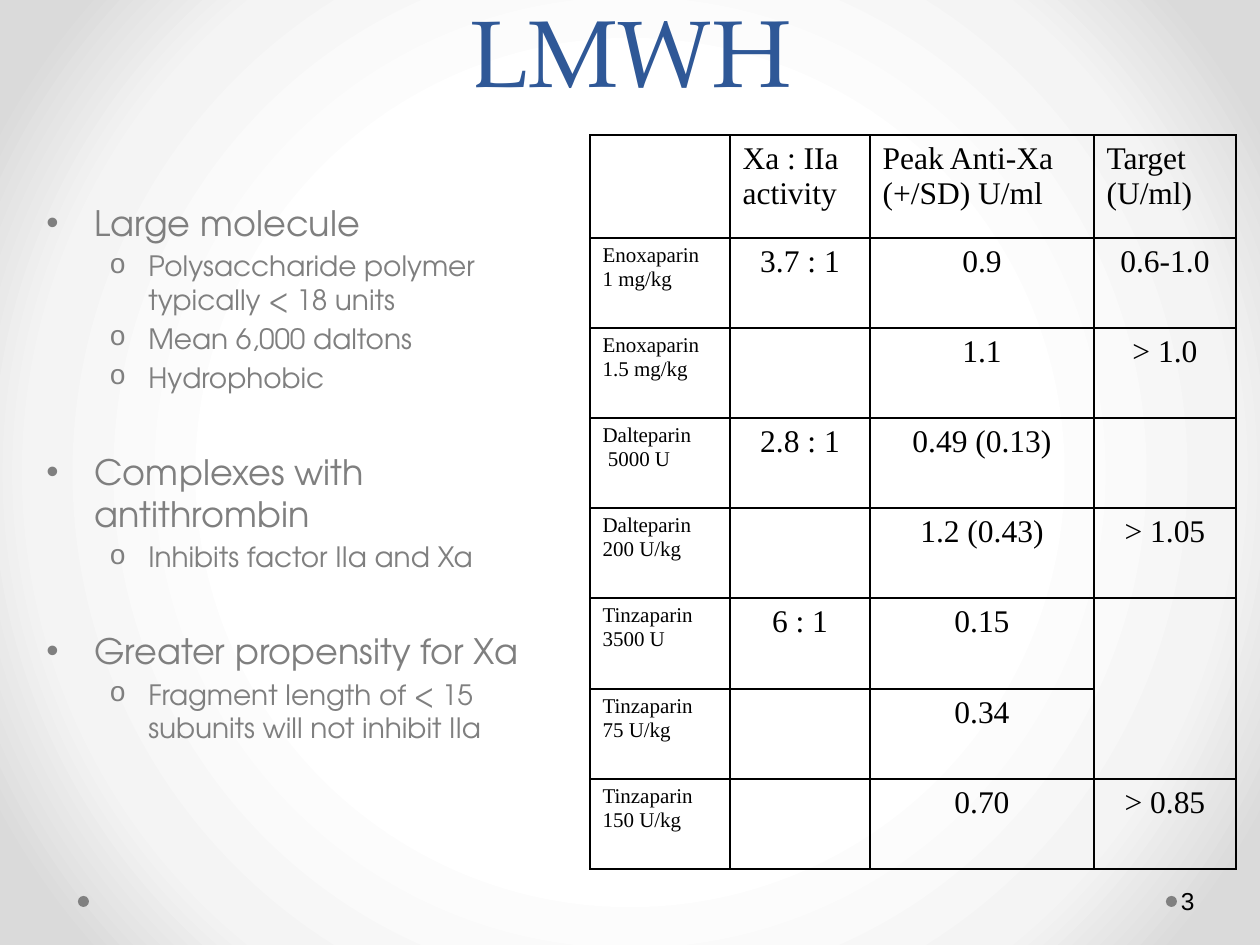
from dataclasses import dataclass

import lxml.etree as etree
import pptx
import pptx.dml.color
import pptx.enum.shapes
import pptx.enum.text
import pptx.oxml.ns
import pptx.util

PX_PER_INCH = 126
ALIGN = pptx.enum.text.PP_ALIGN
ANCHOR = pptx.enum.text.MSO_ANCHOR
qn = pptx.oxml.ns.qn


@dataclass(frozen=True)
class TextStyle:
    font: str
    size: int
    color: str


@dataclass(frozen=True)
class BulletLevel:
    char: str
    char_font: str
    style: TextStyle
    margin: int
    hanging: int
    space_before: float


@dataclass(frozen=True)
class Topic:
    heading: str
    details: tuple[str, ...]
    space_before: float


TITLE = TextStyle("TeX Gyre Pagella", 54, "2F5897")
PAGE_NUMBER = TextStyle("Arial", 14, "000000")
CELL = TextStyle("Times New Roman", 18, "000000")
DRUG = TextStyle("Times New Roman", 12, "000000")
HEADING = BulletLevel("•", "Arial", TextStyle("TeX Gyre Adventor", 20, "7F7F7F"), 48, 48, 4)
DETAIL = BulletLevel("o", "Courier New", TextStyle("TeX Gyre Adventor", 16, "7F7F7F"), 102, 39, 3.2)

TOPICS = (
    Topic("Large molecule", ("Polysaccharide polymer typically < 18 units",
                             "Mean 6,000 daltons", "Hydrophobic"), 4),
    Topic("Complexes with antithrombin", ("Inhibits factor IIa and Xa",), 32),
    Topic("Greater propensity for Xa",
          ("Fragment length of < 15 subunits will not inhibit IIa",), 32),
)

COLUMN_WIDTHS = (140, 140, 224, 142)
ROW_HEIGHTS = (103,) + (90,) * 4 + (91,) + (90,) * 2
ROWS = (
    ("", "Xa : IIa\nactivity", "Peak Anti-Xa\n(+/SD) U/ml", "Target\n(U/ml)"),
    ("Enoxaparin\n1 mg/kg", "3.7 : 1", "0.9", "0.6-1.0"),
    ("Enoxaparin\n1.5 mg/kg", "", "1.1", "> 1.0"),
    ("Dalteparin\n 5000 U", "2.8 : 1", "0.49 (0.13)", ""),
    ("Dalteparin\n200 U/kg", "", "1.2 (0.43)", "> 1.05"),
    ("Tinzaparin\n3500 U", "6 : 1", "0.15", ""),
    ("Tinzaparin\n75 U/kg", "", "0.34", ""),
    ("Tinzaparin\n150 U/kg", "", "0.70", "> 0.85"),
)


def px(length: int) -> int:
    return round(length * 914400 / PX_PER_INCH)


def rgb(color: str) -> pptx.dml.color.RGBColor:
    return pptx.dml.color.RGBColor.from_string(color)


def apply(target, values: dict) -> None:
    for name, value in values.items():
        setattr(target, name, value)


def add_span(para, text: str, style: TextStyle) -> None:
    span = para.add_run()
    span.text = text
    apply(span.font, {"name": style.font, "size": pptx.util.Pt(style.size)})
    span.font.color.rgb = rgb(style.color)


def next_para(frame):
    """Return the first paragraph while it is unused, otherwise a new one."""
    first = frame.paragraphs[0]
    return frame.add_paragraph() if first.runs else first


def set_hanging_indent(para, margin: int, hanging: int):
    properties = para._p.get_or_add_pPr()
    properties.set("marL", str(px(margin)))
    properties.set("indent", str(-px(hanging)))
    return properties


def paint_background(page) -> None:
    fill = page.background.fill
    fill.gradient()
    gradient = page.background._cSld.find(".//" + qn("a:gradFill"))
    for child in list(gradient):
        gradient.remove(child)
    stops = etree.SubElement(gradient, qn("a:gsLst"))
    for position, color in ((50, "FFFFFF"), (76, "F4F4F4"), (92, "DADADA")):
        stop = etree.SubElement(stops, qn("a:gs"), pos=str(position * 1000))
        etree.SubElement(stop, qn("a:srgbClr"), val=color)
    shading = etree.SubElement(gradient, qn("a:path"), {"path": "circle"})
    etree.SubElement(shading, qn("a:fillToRect"), dict.fromkeys("ltrb", "50000"))


def add_dot(page, left: int) -> None:
    dot = page.shapes.add_shape(pptx.enum.shapes.MSO_SHAPE.OVAL,
                                px(left), px(896), px(11), px(11))
    dot.shadow.inherit = False
    dot.fill.solid()
    dot.fill.fore_color.rgb = rgb("808080")
    dot.line.fill.background()


def set_title(page) -> None:
    title = page.shapes.title
    apply(title, {"left": px(64), "top": px(26), "width": px(1134), "height": px(87)})
    apply(title.text_frame, {"vertical_anchor": ANCHOR.BOTTOM, "word_wrap": True,
                             "auto_size": pptx.enum.text.MSO_AUTO_SIZE.NONE})
    para = title.text_frame.paragraphs[0]
    apply(para, {"alignment": ALIGN.CENTER, "line_spacing": pptx.util.Pt(58)})
    add_span(para, "LMWH", TITLE)


def add_bullet(frame, text: str, level: BulletLevel, space_before: float) -> None:
    para = next_para(frame)
    para.space_before = pptx.util.Pt(space_before)
    properties = set_hanging_indent(para, level.margin, level.hanging)
    etree.SubElement(properties, qn("a:buFont"), typeface=level.char_font)
    etree.SubElement(properties, qn("a:buChar"), char=level.char)
    add_span(para, text, level.style)


def add_topics(page) -> None:
    box = page.shapes.add_textbox(px(34), px(195), px(528), px(624))
    box.text_frame.word_wrap = True
    for topic in TOPICS:
        add_bullet(box.text_frame, topic.heading, HEADING, topic.space_before)
        for detail in topic.details:
            add_bullet(box.text_frame, detail, DETAIL, DETAIL.space_before)


def outline_cell(cell) -> None:
    properties = cell._tc.get_or_add_tcPr()
    for side in "LRTB":
        line = etree.SubElement(properties, qn(f"a:ln{side}"), w=str(pptx.util.Pt(1)))
        fill = etree.SubElement(line, qn("a:solidFill"))
        etree.SubElement(fill, qn("a:srgbClr"), val="000000")
    cell.fill.background()


def fill_cell(cell, text: str, style: TextStyle, alignment) -> None:
    outline_cell(cell)
    for line in text.splitlines():
        para = next_para(cell.text_frame)
        para.alignment = alignment
        set_hanging_indent(para, 48, 48)
        add_span(para, line, style)


def add_dose_table(page) -> None:
    table = page.shapes.add_table(len(ROWS), len(COLUMN_WIDTHS), px(590), px(135),
                                  px(sum(COLUMN_WIDTHS)), px(sum(ROW_HEIGHTS))).table
    apply(table, {"first_row": False, "horz_banding": False})
    for column, width in zip(table.columns, COLUMN_WIDTHS):
        column.width = px(width)
    for row, height in zip(table.rows, ROW_HEIGHTS):
        row.height = px(height)
    for row_index, texts in enumerate(ROWS):
        for column_index, text in enumerate(texts):
            is_value = row_index > 0 and column_index > 0
            fill_cell(table.cell(row_index, column_index), text,
                      CELL if column_index else DRUG,
                      ALIGN.CENTER if is_value else ALIGN.LEFT)
    table.cell(5, 3).merge(table.cell(6, 3))


def add_page_number(page) -> None:
    box = page.shapes.add_textbox(px(1177), px(876), px(77), px(50))
    apply(box.text_frame, {"word_wrap": True, "vertical_anchor": ANCHOR.MIDDLE,
                           "margin_left": px(4), "margin_right": px(6)})
    add_span(box.text_frame.paragraphs[0], "3", PAGE_NUMBER)


def main() -> None:
    deck = pptx.Presentation()
    apply(deck, {"slide_width": px(1260), "slide_height": px(945)})
    page = deck.slides.add_slide(deck.slide_layouts.get_by_name("Title Only"))
    paint_background(page)
    for left in (1166, 78):
        add_dot(page, left)
    set_title(page)
    add_topics(page)
    add_dose_table(page)
    add_page_number(page)
    deck.save("out.pptx")


if __name__ == "__main__":
    main()
